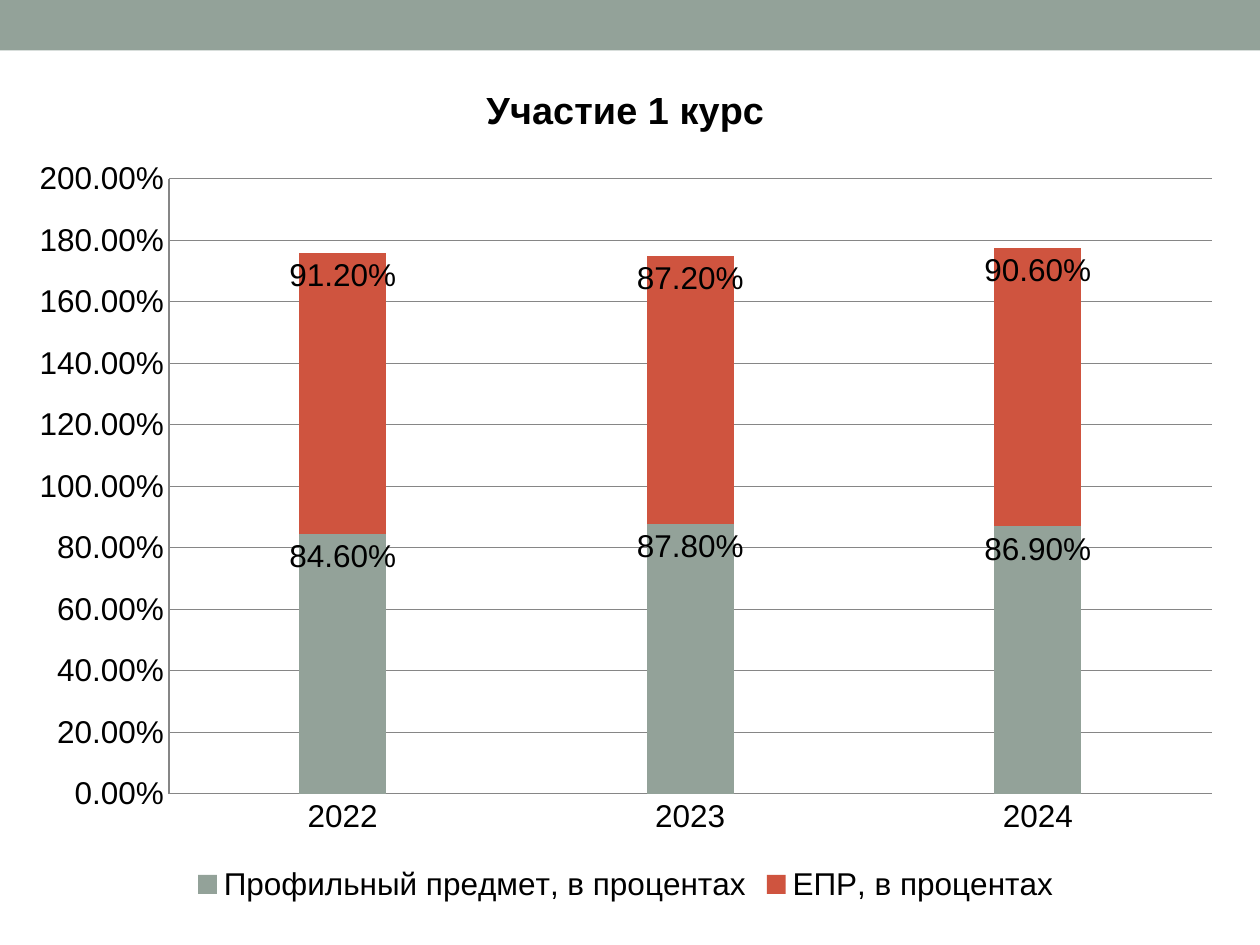
from dataclasses import dataclass
from typing import Any

from pptx import Presentation
from pptx.chart.data import CategoryChartData
from pptx.dml.color import RGBColor
from pptx.enum.chart import XL_CHART_TYPE, XL_LABEL_POSITION, XL_LEGEND_POSITION, XL_TICK_MARK
from pptx.enum.shapes import MSO_SHAPE
from pptx.util import Inches, Pt


@dataclass(frozen=True)
class Theme:
    font: str = "Arial"
    text: str = "000000"
    sage: str = "93A299"
    red: str = "CF543F"
    grid: str = "868686"
    title_size: float = 21.6
    body_size: float = 18


@dataclass(frozen=True)
class ChartSeries:
    name: str
    values: tuple[float, ...]
    color: str


THEME = Theme()
YEARS = ("2022", "2023", "2024")
PERCENT = "0.00%"
PARTICIPATION = (
    ChartSeries("Профильный предмет, в процентах", (0.846, 0.878, 0.869), THEME.sage),
    ChartSeries("ЕПР, в процентах", (0.912, 0.872, 0.906), THEME.red),
)


def format_font(font: Any, *, size: float = THEME.body_size, bold: bool = False) -> None:
    font.name = THEME.font
    font.size = Pt(size)
    font.bold = bold
    font.color.rgb = RGBColor.from_string(THEME.text)


def write_text(text_frame: Any, text: str, **font_format: Any) -> None:
    run = text_frame.paragraphs[0].add_run()
    run.text = text
    format_font(run.font, **font_format)


def fill_solid(fill: Any, color: str) -> None:
    fill.solid()
    fill.fore_color.rgb = RGBColor.from_string(color)


def draw_header_band(slide: Any, width: int) -> None:
    band = slide.shapes.add_shape(MSO_SHAPE.RECTANGLE, 0, 0, width, Inches(0.4))
    band.shadow.inherit = False
    fill_solid(band.fill, THEME.sage)
    band.line.fill.background()


def style_line(line: Any) -> None:
    line.color.rgb = RGBColor.from_string(THEME.grid)
    line.width = Pt(0.75)


def style_axis(axis: Any) -> None:
    axis.major_tick_mark = axis.minor_tick_mark = XL_TICK_MARK.NONE
    style_line(axis.format.line)
    format_font(axis.tick_labels.font)


def style_series(series: Any, color: str) -> None:
    fill_solid(series.format.fill, color)
    labels = series.data_labels
    labels.show_value = True
    labels.position = XL_LABEL_POSITION.INSIDE_END
    labels.number_format = PERCENT
    labels.number_format_is_linked = False
    format_font(labels.font)


def draw_participation_chart(slide: Any) -> None:
    chart_data = CategoryChartData(number_format=PERCENT)
    chart_data.categories = YEARS
    for item in PARTICIPATION:
        chart_data.add_series(item.name, item.values)
    chart = slide.shapes.add_chart(
        XL_CHART_TYPE.COLUMN_STACKED,
        Inches(0.12), Inches(0.44), Inches(9.69), Inches(6.77), chart_data,
    ).chart
    format_font(chart.font)

    chart.has_title = True
    write_text(chart.chart_title.text_frame, "Участие 1 курс", size=THEME.title_size, bold=True)
    chart.chart_title.include_in_layout = False
    chart.has_legend = True
    chart.legend.position = XL_LEGEND_POSITION.BOTTOM
    chart.legend.include_in_layout = False
    format_font(chart.legend.font)

    for axis in (chart.category_axis, chart.value_axis):
        style_axis(axis)
    value_axis = chart.value_axis
    value_axis.minimum_scale, value_axis.maximum_scale = 0, 2
    value_axis.major_unit = 0.2
    value_axis.tick_labels.number_format = PERCENT
    value_axis.tick_labels.number_format_is_linked = False
    value_axis.has_major_gridlines = True
    style_line(value_axis.major_gridlines.format.line)

    plot = chart.plots[0]
    plot.gap_width, plot.overlap = 300, 100
    plot.vary_by_categories = False
    for series, item in zip(plot.series, PARTICIPATION):
        style_series(series, item.color)


def main() -> None:
    """Build the slide on first-year participation and save it."""
    presentation = Presentation()
    presentation.slide_width, presentation.slide_height = Inches(10), Inches(7.5)
    slide = presentation.slides.add_slide(presentation.slide_layouts[6])
    draw_header_band(slide, presentation.slide_width)
    draw_participation_chart(slide)
    presentation.save("out.pptx")


if __name__ == "__main__":
    main()
